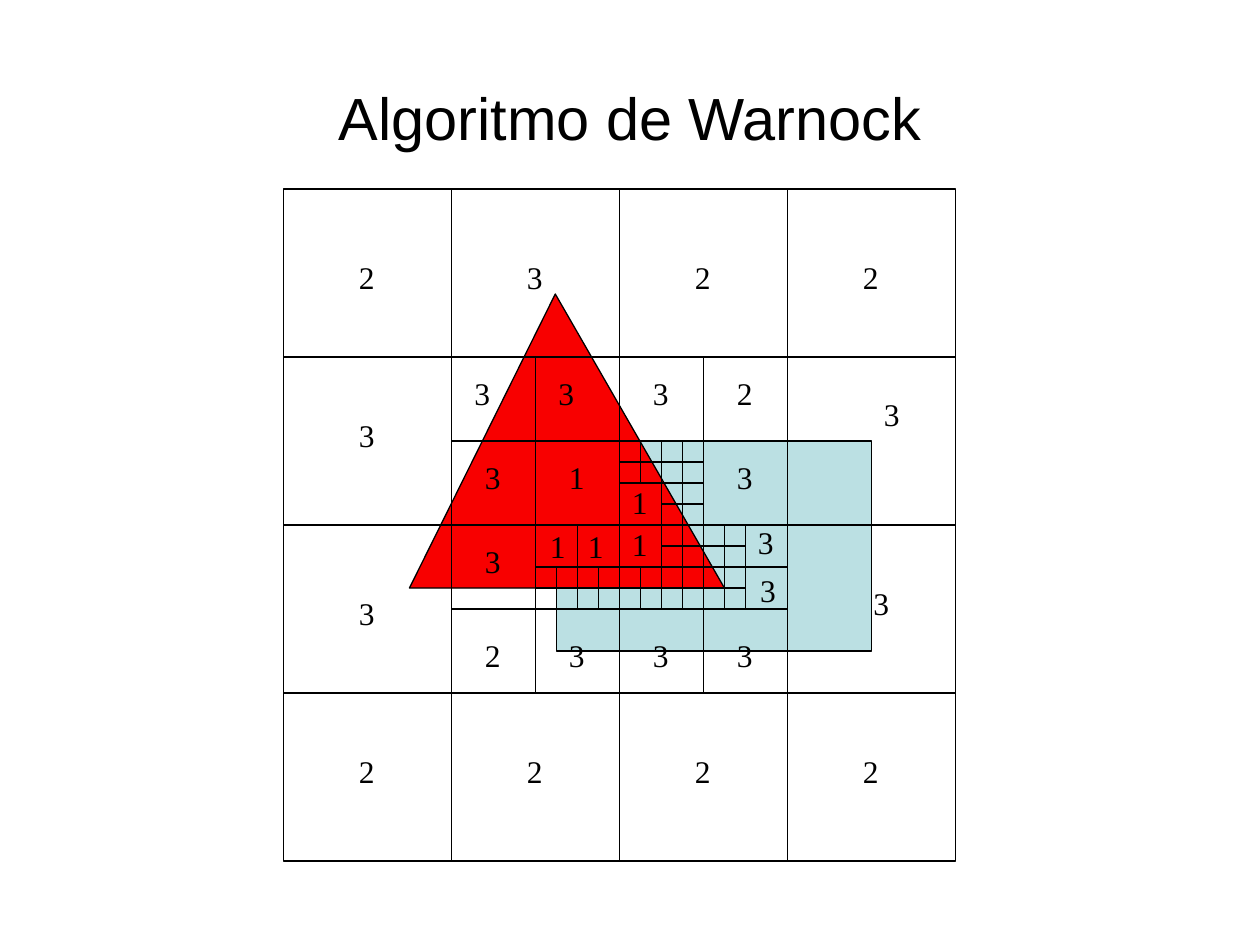
from dataclasses import dataclass

from lxml import etree
from pptx import Presentation
from pptx.dml.color import RGBColor
from pptx.enum.shapes import MSO_CONNECTOR, MSO_SHAPE
from pptx.enum.text import MSO_ANCHOR, MSO_AUTO_SIZE, PP_ALIGN
from pptx.oxml.ns import qn
from pptx.util import Inches, Pt

RECTANGLE = MSO_SHAPE.RECTANGLE
TRIANGLE = MSO_SHAPE.ISOSCELES_TRIANGLE
STRAIGHT = MSO_CONNECTOR.STRAIGHT
MIDDLE = MSO_ANCHOR.MIDDLE
CENTER = PP_ALIGN.CENTER
FIT_TEXT = MSO_AUTO_SIZE.SHAPE_TO_FIT_TEXT
TOP, LEFT, BOTTOM, RIGHT = range(4)


@dataclass(frozen=True)
class Theme:
    ink: RGBColor = RGBColor(0, 0, 0)
    triangle: RGBColor = RGBColor(0xF8, 0, 0)
    rectangle: RGBColor = RGBColor(0xBB, 0xE0, 0xE3)
    title_font: str = "Arial"
    title_size: Pt = Pt(34)
    label_font: str = "Times New Roman"
    label_size: Pt = Pt(18)
    line_width: Pt = Pt(0.75)


THEME = Theme()

# The window is a 32 x 32 grid; the smallest subdivision is one cell.
WINDOW_LEFT, WINDOW_TOP = 2.25, 1.5
CELL = 1 / 6
SIDE = 32
HALF = SIDE // 2
QUARTERS = (8, 16, 24)

# (column, first row, last row)
COLUMN_SPLITS = [
    (12, 8, 24), (20, 8, 24),
    (18, 12, 20), (19, 12, 20), (17, 12, 14),
    (14, 16, 20), (22, 16, 20), (21, 16, 18),
    (13, 18, 20), (15, 18, 20), (17, 18, 20), (21, 18, 20),
]
# (row, first column, last column)
ROW_SPLITS = [
    (12, 8, 24), (20, 8, 24),
    (13, 16, 20), (14, 16, 20), (15, 18, 20),
    (17, 18, 22), (18, 12, 24), (19, 12, 22),
]
# Case of the algorithm: (column, row) of each label's top left corner
CASE_LABELS = {
    "2": [(3, 3), (19, 3), (27, 3), (21, 8.5), (9, 21),
          (3, 26.5), (11, 26.5), (19, 26.5), (27, 26.5)],
    "3": [(11, 3), (3, 10.5), (3, 19), (8.5, 8.5), (12.5, 8.5), (17, 8.5),
          (9, 12.5), (9, 16.5), (21, 12.5), (28, 9.5), (27.5, 18.5),
          (13, 21), (17, 21), (21, 21), (22, 15.6), (22.1, 17.9)],
    "1": [(13, 12.5), (12.1, 15.8), (13.9, 15.8), (16, 15.7), (16, 13.7)],
}


def grid_point(column, row):
    return Inches(WINDOW_LEFT + column * CELL), Inches(WINDOW_TOP + row * CELL)


def cells(count):
    return Inches(count * CELL)


def add_run(paragraph, text, font, size):
    run = paragraph.add_run()
    run.text = text
    run.font.name = font
    run.font.size = size
    run.font.color.rgb = THEME.ink


def style_line(line):
    line.color.rgb = THEME.ink
    line.width = THEME.line_width


def add_title(slide, text):
    title = slide.shapes.title
    title.left, title.top = Inches(0.5), Inches(0.3)
    title.width, title.height = Inches(9), Inches(1.25)
    title.text_frame.vertical_anchor = MIDDLE
    paragraph = title.text_frame.paragraphs[0]
    paragraph.alignment = CENTER
    add_run(paragraph, text, THEME.title_font, THEME.title_size)


def add_polygon(slide, preset, column, row, width, height, color=None):
    polygon = slide.shapes.add_shape(
        preset, *grid_point(column, row), cells(width), cells(height))
    polygon.shadow.inherit = False
    if color is None:
        polygon.fill.background()
    else:
        polygon.fill.solid()
        polygon.fill.fore_color.rgb = color
    style_line(polygon.line)
    return polygon


def add_split(slide, start, end):
    split = slide.shapes.add_connector(
        STRAIGHT, *grid_point(*start), *grid_point(*end))
    style_line(split.line)
    etree.SubElement(split._element.spPr, qn("a:effectLst"))
    return split


def add_quarters(slide, window):
    """Split the window in four both ways, joining the middle lines to it."""
    for position in QUARTERS:
        vertical = add_split(slide, (position, 0), (position, SIDE))
        horizontal = add_split(slide, (0, position), (SIDE, position))
        if position == HALF:
            vertical.begin_connect(window, TOP)
            vertical.end_connect(window, BOTTOM)
            horizontal.begin_connect(window, LEFT)
            horizontal.end_connect(window, RIGHT)


def add_label(slide, text, column, row):
    label = slide.shapes.add_textbox(
        *grid_point(column, row), cells(2), Inches(0.4))
    frame = label.text_frame
    frame.word_wrap = False
    frame.auto_size = FIT_TEXT
    add_run(frame.paragraphs[0], text, THEME.label_font, THEME.label_size)


def main():
    deck = Presentation()
    deck.slide_width, deck.slide_height = Inches(10), Inches(7.5)
    slide = deck.slides.add_slide(deck.slide_layouts.get_by_name("Title Only"))
    add_title(slide, "Algoritmo de Warnock")

    add_polygon(slide, RECTANGLE, 13, 12, 15, 10, THEME.rectangle)
    triangle = add_polygon(slide, TRIANGLE, 6, 5, 15, 14, THEME.triangle)
    triangle.adjustments[0] = 0.463
    window = add_polygon(slide, RECTANGLE, 0, 0, SIDE, SIDE)

    add_quarters(slide, window)
    for column, first, last in COLUMN_SPLITS:
        add_split(slide, (column, first), (column, last))
    for row, first, last in ROW_SPLITS:
        add_split(slide, (first, row), (last, row))
    for case, corners in CASE_LABELS.items():
        for column, row in corners:
            add_label(slide, case, column, row)

    deck.save("out.pptx")


if __name__ == "__main__":
    main()
